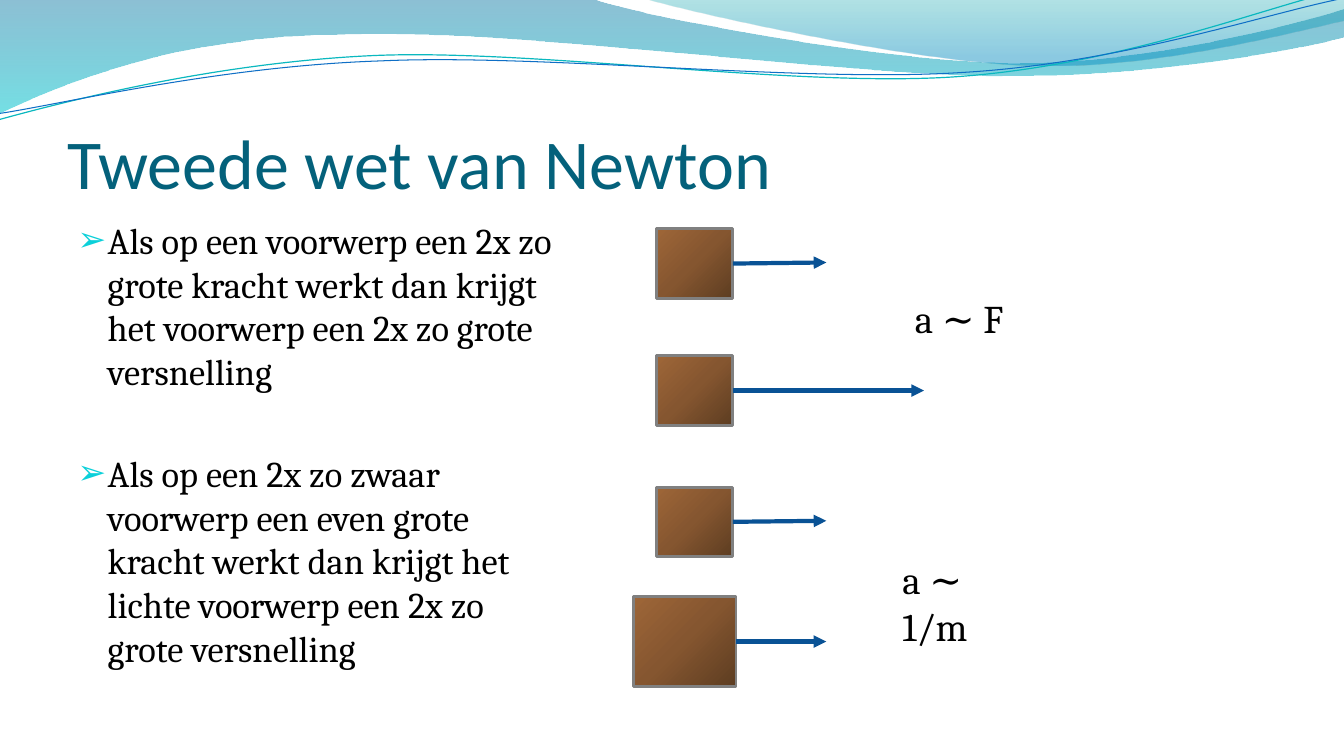
from dataclasses import dataclass
from math import cos, radians, sin

from lxml.etree import SubElement
from pptx import Presentation
from pptx.dml.color import RGBColor
from pptx.enum.shapes import MSO_CONNECTOR, MSO_SHAPE
from pptx.enum.text import MSO_ANCHOR, MSO_AUTO_SIZE, PP_ALIGN
from pptx.oxml.ns import qn
from pptx.util import Pt

PX = 9525  # EMU in one px, 96 px to the inch


@dataclass(frozen=True)
class Theme:
    head: str = "Calibri"
    text: str = "Cambria"
    title: str = "04617B"
    ink: str = "000000"
    bullet: str = "0BD0D9"
    edge: str = "808080"
    arrow: str = "095295"
    teal: str = "0AB8BF"
    blue: str = "0F6FC6"
    # Gradient stops: position, colour, opacity, all numbers in percent
    wave: tuple = ((0, "0074A1", 45), (100, "00C6CF", 55))
    crest: tuple = ((0, "00A1A9", 30), (80, "008BBF", 45))
    wood: tuple = ((0, "5D3D21", 100), (50, "855630", 100), (100, "9E6638", 100))
    big: int = 50
    body: int = 26
    label: int = 28
    tilt: float = 2.7


def turn(point, mid, angle):
    """Rotate a point clockwise about mid."""
    x, y = point[0] - mid[0], point[1] - mid[1]
    c, s = cos(radians(angle)), sin(radians(angle))
    return mid[0] + x * c - y * s, mid[1] + x * s + y * c


class Deck:
    def __init__(self, theme):
        self.theme = theme
        self.file = Presentation()
        self.file.slide_width, self.file.slide_height = 1280 * PX, 720 * PX
        self.slide = self.file.slides.add_slide(self.file.slide_layouts[1])
        self.shapes = self.slide.shapes

    def place(self, shape, box):
        shape.left, shape.top, shape.width, shape.height = (n * PX for n in box)

    def font(self, para, name, size, color):
        para.font.name, para.font.size = name, Pt(size)
        para.font.color.rgb = RGBColor.from_string(color)

    def stroke(self, shape, color, width):
        shape.line.color.rgb = RGBColor.from_string(color)
        shape.line.width = Pt(width)

    def blend(self, shape, stops, corner=False):
        """Fill downwards, or outwards from the lower right corner."""
        shape.fill.solid()
        solid = shape.element.spPr.find(qn("a:solidFill"))
        grad = solid.makeelement(qn("a:gradFill"), rotWithShape="1")
        items = SubElement(grad, qn("a:gsLst"))
        for pos, color, alpha in stops:
            stop = SubElement(items, qn("a:gs"), pos=str(pos * 1000))
            tint = SubElement(stop, qn("a:srgbClr"), val=color)
            if alpha < 100:
                SubElement(tint, qn("a:alpha"), val=str(alpha * 1000))
        if corner:
            focus = SubElement(grad, qn("a:path"), path="circle")
            SubElement(focus, qn("a:fillToRect"), l="100000", t="100000")
        else:
            SubElement(grad, qn("a:lin"), ang="5400000", scaled="1")
        solid.getparent().replace(solid, grad)

    def outline(self, start, steps, close):
        """Draw steps of one point as lines and of three points as Beziers."""
        first, *rest = [(round(x * PX), round(y * PX))
                        for x, y in (start, *(p for step in steps for p in step))]
        pen = self.shapes.build_freeform(*first, scale=1.0)
        pen.add_line_segments(rest, close=close)
        shape = pen.convert_to_shape()
        shape.shadow.inherit = False
        nodes = iter(list(shape.element.iter(qn("a:lnTo"))))
        for step in steps:
            lines = [next(nodes) for _ in step]
            if len(lines) == 3:
                bend = lines[0].makeelement(qn("a:cubicBezTo"))
                lines[0].addprevious(bend)
                for line in lines:
                    bend.append(line[0])
                    line.getparent().remove(line)
        return shape

    def band(self, start, steps, stops):
        shape = self.outline(start, steps, True)
        self.blend(shape, stops)
        shape.line.fill.background()

    def curve(self, mid, start, steps, color, width):
        """Draw a tilted line, its points given as they lie on the slide."""
        tilt = self.theme.tilt
        level = [[turn(p, mid, tilt) for p in step] for step in steps]
        shape = self.outline(turn(start, mid, tilt), level, False)
        shape.rotation = 360 - tilt
        shape.fill.background()
        self.stroke(shape, color, width)

    def title(self, text, box):
        shape = self.shapes.title
        self.place(shape, box)
        frame = shape.text_frame
        frame.text = text
        frame.auto_size = MSO_AUTO_SIZE.NONE
        frame.vertical_anchor = MSO_ANCHOR.BOTTOM
        frame.margin_left = frame.margin_right = frame.margin_bottom = 0
        para = frame.paragraphs[0]
        para.alignment = PP_ALIGN.LEFT
        self.font(para, self.theme.head, self.theme.big, self.theme.title)

    def list(self, items, box, gap):
        shape = self.slide.placeholders[1]
        self.place(shape, box)
        frame = shape.text_frame
        frame.text = "\n".join(items)
        frame.auto_size = MSO_AUTO_SIZE.NONE
        for i, para in enumerate(frame.paragraphs):
            props = para._p.get_or_add_pPr()
            props.set("marL", str(29 * PX))
            props.set("indent", str(-29 * PX))
            tint = SubElement(props, qn("a:buClr"))
            SubElement(tint, qn("a:srgbClr"), val=self.theme.bullet)
            SubElement(props, qn("a:buSzPct"), val="95000")
            SubElement(props, qn("a:buChar"), char="➢")
            para.space_before = Pt(gap if i else 5)
            self.font(para, self.theme.text, self.theme.body, self.theme.ink)

    def label(self, text, box):
        shape = self.shapes.add_textbox(*(n * PX for n in box))
        frame = shape.text_frame
        frame.word_wrap = True
        frame.auto_size = MSO_AUTO_SIZE.SHAPE_TO_FIT_TEXT
        frame.text = text
        self.font(frame.paragraphs[0], self.theme.text, self.theme.label, self.theme.ink)

    def block(self, box, tip, rise):
        """Group a wooden block with the force arrow on its right side."""
        left, top, width, height = box
        group = self.shapes.add_group_shape().shapes
        shape = group.add_shape(MSO_SHAPE.RECTANGLE, *(n * PX for n in box))
        shape.shadow.inherit = False
        self.blend(shape, self.theme.wood, corner=True)
        self.stroke(shape, self.theme.edge, 2)
        y = top + height // 2
        ends = (left + width, y, tip, y - rise)
        line = group.add_connector(MSO_CONNECTOR.STRAIGHT, *(n * PX for n in ends))
        self.stroke(line, self.theme.arrow, 3)
        SubElement(line.line._get_or_add_ln(), qn("a:tailEnd"), type="triangle")
        SubElement(line.element.spPr, qn("a:effectLst"))


def main():
    theme = Theme()
    deck = Deck(theme)

    deck.band((0, -1), [
        [(564, -1)],
        [(609, 16), (850, 60), (971, 60)],
        [(1092, 60), (1227, 25), (1280, 9)],
        [(1282, 35)],
        [(1259, 42), (1114, 73), (954, 72)],
        [(796, 72), (489, 27), (329, 33)],
        [(165, 34), (59, 80), (-1, 108)],
        [(0, -1)],
    ], theme.wave)
    deck.band((613, -1), [
        [(652, 11), (873, 60), (984, 62)],
        [(1095, 66), (1231, 31), (1280, 20)],
        [(1280, 0)],
        [(613, -1)],
    ], theme.crest)
    deck.curve((638, 55), (-1, 114), [
        [(61, 97), (203, 60), (354, 53)],
        [(506, 46), (758, 84), (912, 73)],
        [(1066, 62), (1202, 8), (1278, -10)],
    ], theme.teal, 0.85)
    deck.curve((640, 57), (0, 108), [
        [(60, 99), (209, 63), (363, 58)],
        [(516, 51), (764, 79), (917, 69)],
        [(1070, 60), (1205, 13), (1281, -2)],
    ], theme.blue, 0.75)

    deck.title("Tweede wet van Newton", (64, 74, 1152, 120))
    deck.list([
        "Als op een voorwerp een 2x zo grote kracht werkt dan krijgt "
        "het voorwerp een 2x zo grote versnelling",
        "Als op een 2x zo zwaar voorwerp een even grote kracht werkt dan krijgt "
        "het lichte voorwerp een 2x zo grote versnelling",
    ], (64, 203, 477, 461), gap=41.6)

    for box, tip, rise in (
        ((625, 218, 73, 66), 787, 1),
        ((625, 339, 73, 66), 880, 0),
        ((625, 464, 73, 66), 787, 1),
        ((603, 568, 98, 86), 787, 0),
    ):
        deck.block(box, tip, rise)
    deck.label("a ∼ F", (862, 276, 156, 55))
    deck.label("a ∼ 1/m", (850, 524, 135, 55))

    deck.file.save("out.pptx")


if __name__ == "__main__":
    main()
